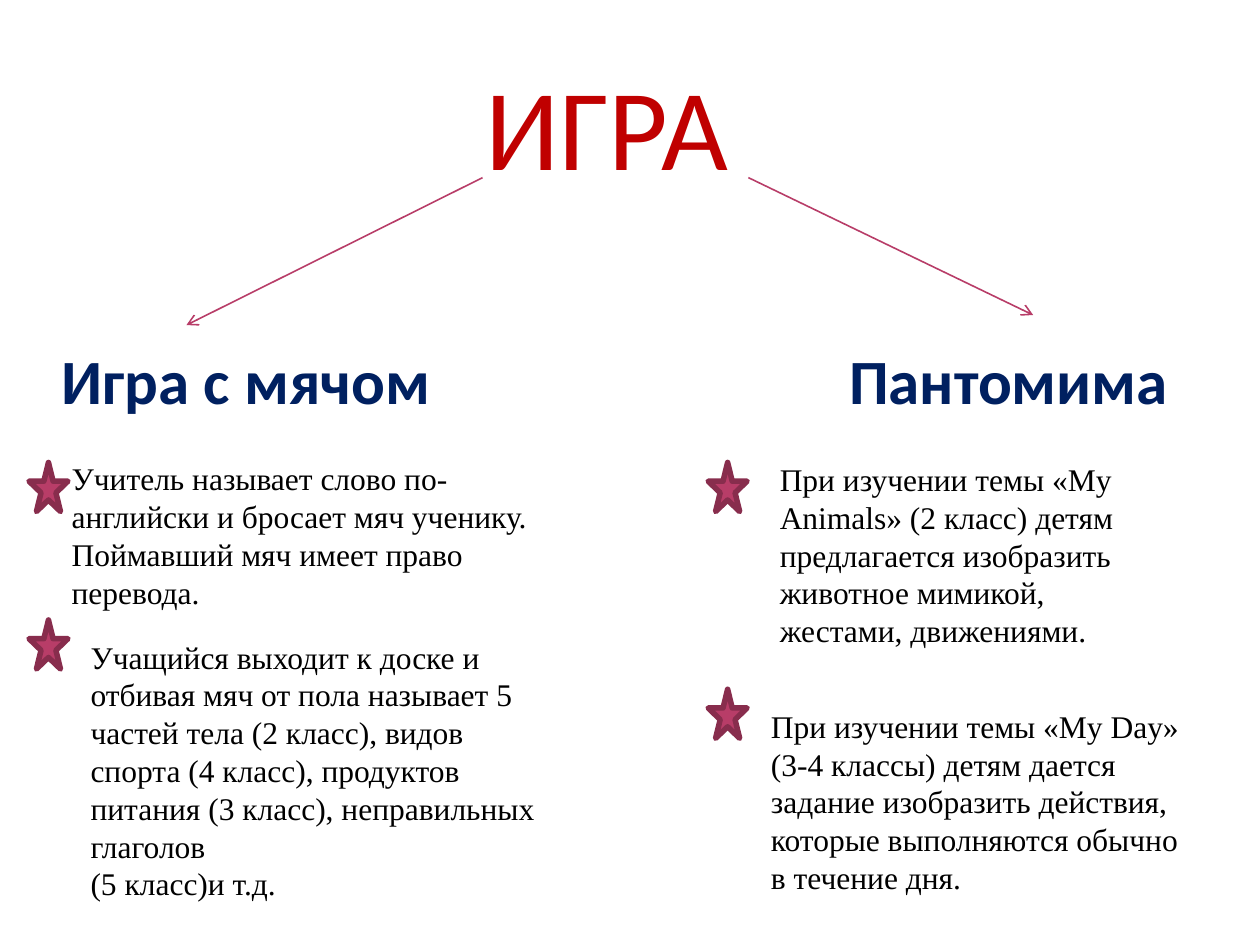
"""Build a slide about two classroom games and their rules."""
from dataclasses import dataclass

from lxml import etree
from pptx import Presentation
from pptx.dml.color import RGBColor
from pptx.enum.shapes import MSO_CONNECTOR, MSO_SHAPE
from pptx.enum.text import MSO_ANCHOR, MSO_AUTO_SIZE, PP_ALIGN
from pptx.oxml.ns import qn
from pptx.util import Inches, Pt

RED = RGBColor(0xC0, 0x00, 0x00)
NAVY = RGBColor(0x00, 0x20, 0x60)
BLACK = RGBColor(0x00, 0x00, 0x00)
ROSE = RGBColor(0xB8, 0x3D, 0x68)
DARK_ROSE = RGBColor(0x88, 0x2D, 0x4D)

STRAIGHT = MSO_CONNECTOR.STRAIGHT
STAR = MSO_SHAPE.STAR_5_POINT
TOP, MIDDLE = MSO_ANCHOR.TOP, MSO_ANCHOR.MIDDLE
FIT_SHAPE = MSO_AUTO_SIZE.SHAPE_TO_FIT_TEXT
LEFT = PP_ALIGN.LEFT


@dataclass(frozen=True)
class Style:
    font: str
    size: int
    color: RGBColor
    bold: bool = False
    wrap: bool = False
    anchor: MSO_ANCHOR = TOP


@dataclass(frozen=True)
class Label:
    left: float
    top: float
    width: float
    height: float
    text: str


@dataclass(frozen=True)
class Arrow:
    start: tuple[float, float]
    end: tuple[float, float]


TITLE_STYLE = Style("Calibri", 66, RED)
HEADING_STYLE = Style("Calibri", 36, NAVY, bold=True)
BODY_STYLE = Style("Times New Roman", 18, BLACK, wrap=True, anchor=MIDDLE)

TITLE = Label(3.75, 0.39, 2.16, 1.21, "ИГРА")
ARROWS = [Arrow((3.83, 1.41), (1.48, 2.58)), Arrow((5.94, 1.41), (8.2, 2.5))]
HEADINGS = [
    Label(0.39, 2.66, 3.16, 0.71, "Игра с мячом"),
    Label(6.64, 2.66, 2.87, 0.71, "Пантомима"),
]
BODIES = [
    Label(0.47, 3.59, 4.22, 1.31,
          "Учитель называет слово по-английски и бросает мяч ученику. "
          "Поймавший мяч имеет право перевода."),
    Label(0.62, 5, 3.91, 2.22,
          "Учащийся выходит к доске и отбивая мяч от пола называет 5 частей "
          "тела (2 класс), видов спорта (4 класс), продуктов питания "
          "(3 класс), неправильных глаголов\n(5 класс)и т.д."),
    Label(6.09, 3.59, 3.12, 1.62,
          "При изучении темы «My Animals» (2 класс) детям предлагается "
          "изобразить животное мимикой, жестами, движениями."),
    Label(6.02, 5.55, 3.59, 1.62,
          "При изучении темы «My Day» (3-4 классы) детям дается задание "
          "изобразить действия, которые выполняются обычно в течение дня."),
]
STAR_POSITIONS = [(0.23, 3.67), (0.23, 4.92), (5.62, 3.67), (5.62, 5.47)]


def fill_label(box, label: Label, style: Style) -> None:
    box.left, box.top = Inches(label.left), Inches(label.top)
    box.width, box.height = Inches(label.width), Inches(label.height)
    frame = box.text_frame
    frame.text = label.text
    frame.word_wrap = style.wrap
    frame.auto_size = FIT_SHAPE
    frame.vertical_anchor = style.anchor
    for paragraph in frame.paragraphs:
        paragraph.alignment = LEFT
        paragraph.font.name = style.font
        paragraph.font.size = Pt(style.size)
        paragraph.font.bold = style.bold
        paragraph.font.color.rgb = style.color


def add_label(page, label: Label, style: Style) -> None:
    fill_label(page.shapes.add_textbox(0, 0, 0, 0), label, style)


def add_arrow(page, arrow: Arrow) -> None:
    ends = [Inches(value) for value in arrow.start + arrow.end]
    connector = page.shapes.add_connector(STRAIGHT, *ends)
    connector.line.color.rgb = ROSE
    connector.line.width = Pt(0.9)
    etree.SubElement(connector.line._get_or_add_ln(), qn("a:tailEnd"), type="arrow")
    etree.SubElement(connector._element.spPr, qn("a:effectLst"))


def add_star(page, left: float, top: float) -> None:
    star = page.shapes.add_shape(
        STAR, Inches(left), Inches(top), Inches(0.31), Inches(0.39))
    star.shadow.inherit = False
    star.fill.solid()
    star.fill.fore_color.rgb = ROSE
    star.line.color.rgb = DARK_ROSE
    star.line.width = Pt(3.15)


def main() -> None:
    deck = Presentation()
    deck.slide_width, deck.slide_height = Inches(10), Inches(7.5)
    page = deck.slides.add_slide(deck.slide_layouts.get_by_name("Title Only"))
    fill_label(page.shapes.title, TITLE, TITLE_STYLE)
    for arrow in ARROWS:
        add_arrow(page, arrow)
    for heading in HEADINGS:
        add_label(page, heading, HEADING_STYLE)
    for body in BODIES:
        add_label(page, body, BODY_STYLE)
    for left, top in STAR_POSITIONS:
        add_star(page, left, top)
    deck.save("out.pptx")


if __name__ == "__main__":
    main()
